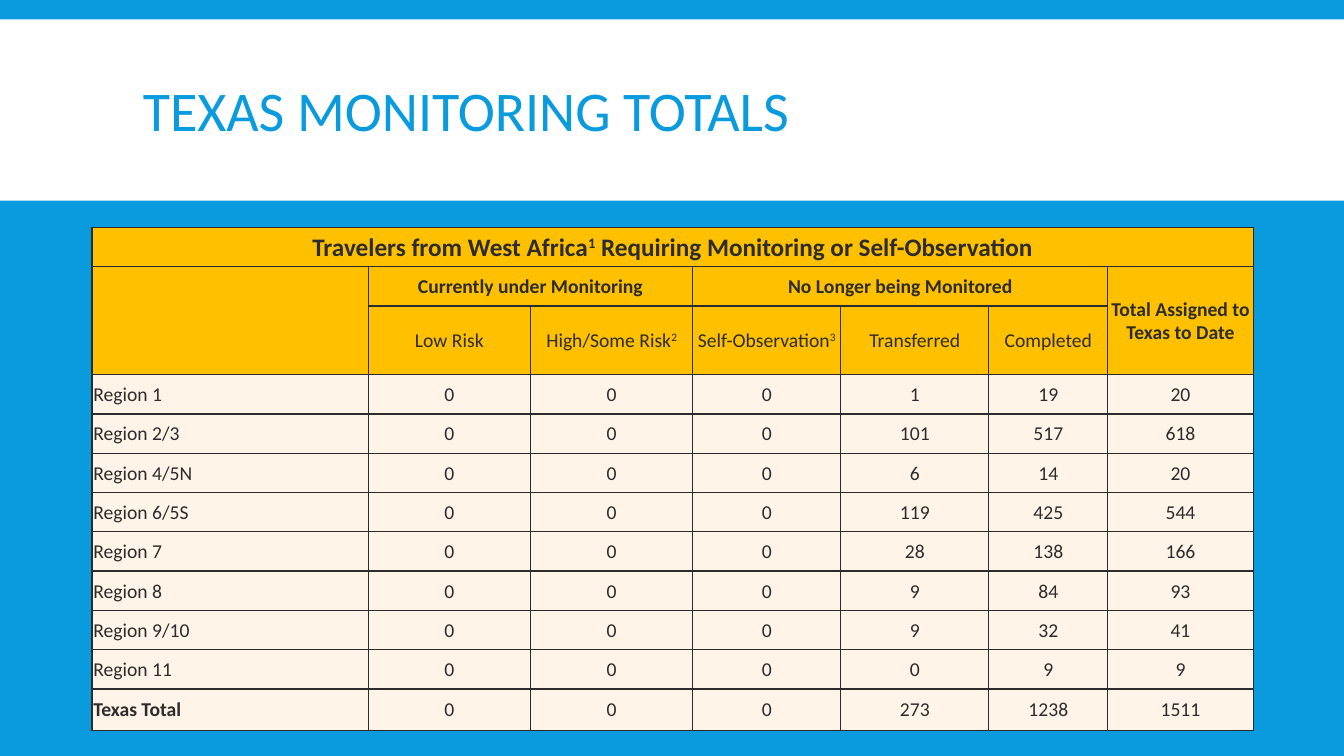
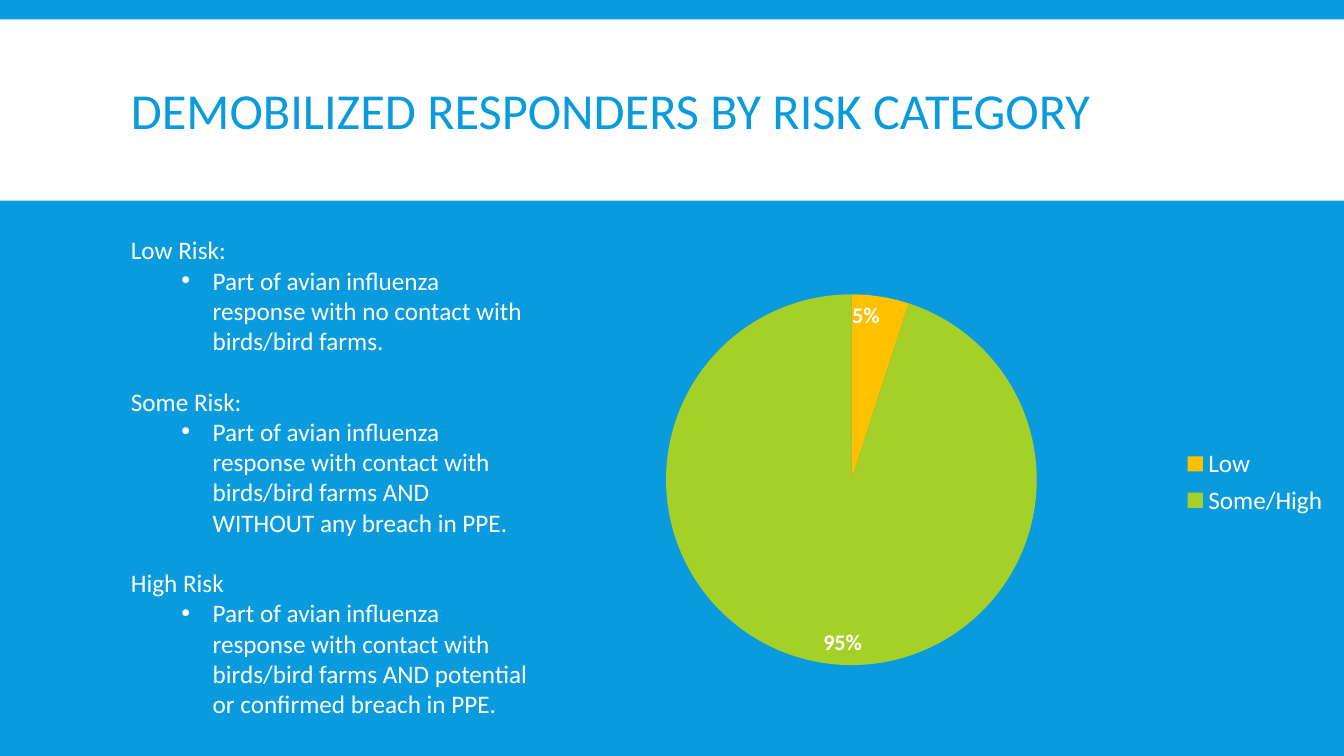
from dataclasses import dataclass

from lxml.etree import SubElement
from pptx import Presentation
from pptx.chart.data import CategoryChartData
from pptx.dml.color import RGBColor as RGB
from pptx.enum.chart import XL_CHART_TYPE as CT, XL_LABEL_POSITION as LP, XL_LEGEND_POSITION as LG
from pptx.enum.shapes import MSO_SHAPE as SHAPE
from pptx.enum.text import MSO_ANCHOR as ANCHOR, PP_ALIGN as ALIGN
from pptx.oxml import parse_xml
from pptx.oxml.ns import nsdecls, qn
from pptx.util import Cm, Pt


@dataclass(frozen=True)
class Theme:
    font: str = "Calibri"
    blue: RGB = RGB(0x09, 0x9B, 0xDD)
    white: RGB = RGB(0xFF, 0xFF, 0xFF)
    ink: RGB = RGB(0x2C, 0x2C, 0x2C)
    gold: RGB = RGB(0xFF, 0xC0, 0x00)
    cream: RGB = RGB(0xFF, 0xF4, 0xE7)
    green: RGB = RGB(0xA5, 0xD0, 0x28)
    body: int = 18
    cell: int = 14
    label: int = 16


T = Theme()
SLIDE_W, SLIDE_H = 33.87, 19.05

TOTALS_TITLE = "TEXAS MONITORING TOTALS"
HEADER = [
    (0, 0, 1, 7, "Travelers from West Africa^1^ Requiring Monitoring or Self-Observation", 18, True),
    (1, 0, 2, 1, "", 14, True),
    (1, 1, 1, 2, "Currently under Monitoring", 14, True),
    (1, 3, 1, 3, "No Longer being Monitored", 14, True),
    (1, 6, 2, 1, "Total Assigned to Texas to Date", 14, True),
    (2, 1, 1, 1, "Low Risk", 14, False),
    (2, 2, 1, 1, "High/Some Risk^2^", 14, False),
    (2, 3, 1, 1, "Self-Observation^3^", 14, False),
    (2, 4, 1, 1, "Transferred", 14, False),
    (2, 5, 1, 1, "Completed", 14, False),
]
REGIONS = [
    ("Region 1", 0, 0, 0, 1, 19, 20),
    ("Region 2/3", 0, 0, 0, 101, 517, 618),
    ("Region 4/5N", 0, 0, 0, 6, 14, 20),
    ("Region 6/5S", 0, 0, 0, 119, 425, 544),
    ("Region 7", 0, 0, 0, 28, 138, 166),
    ("Region 8", 0, 0, 0, 9, 84, 93),
    ("Region 9/10", 0, 0, 0, 9, 32, 41),
    ("Region 11", 0, 0, 0, 0, 9, 9),
    ("Texas Total", 0, 0, 0, 273, 1238, 1511),
]
HEAD_ROWS = 3
COL_W = [6.96, 4.09, 4.09, 3.73, 3.73, 3.0, 3.66]
ROW_H = [0.99, 0.99, 1.73] + [0.99] * (len(REGIONS) - 1) + [1.04]

RISK_TITLE = "DEMOBILIZED RESPONDERS BY RISK CATEGORY"
RISKS = [
    ("Low Risk:", "Part of avian influenza response with no contact with birds/bird farms."),
    ("Some Risk:", "Part of avian influenza response with contact with birds/bird farms "
                   "AND WITHOUT any breach in PPE."),
    ("High Risk", "Part of avian influenza response with contact with birds/bird farms "
                  "AND potential or confirmed breach in PPE."),
]
SHARES = [("Low", 5, T.gold), ("Some/High", 95, T.green)]


def style(font, size, color, bold=False):
    font.name, font.size, font.bold = T.font, Pt(size), bold
    font.color.rgb = color


def add_run(p, text, size, color, bold=False):
    r = p.add_run()
    r.text = text
    style(r.font, size, color, bold)
    return r


def add_box(slide, x, y, w, h):
    tf = slide.shapes.add_textbox(Cm(x), Cm(y), Cm(w), Cm(h)).text_frame
    tf.word_wrap = True
    return tf


def add_slide(prs, title, x, w, size):
    slide = prs.slides.add_slide(prs.slide_layouts[6])
    fill = slide.background.fill
    fill.solid()
    fill.fore_color.rgb = T.blue
    band = slide.shapes.add_shape(SHAPE.RECTANGLE, 0, Cm(0.49), Cm(SLIDE_W), Cm(4.57))
    band.shadow.inherit = False
    band.fill.solid()
    band.fill.fore_color.rgb = T.white
    band.line.fill.background()
    tf = add_box(slide, x, 0.79, w, 4.19)
    tf.vertical_anchor = ANCHOR.MIDDLE
    p = tf.paragraphs[0]
    p.line_spacing = 0.85
    add_run(p, title, size, T.blue)
    return slide


def format_cell(cell, color):
    cell.margin_left = cell.margin_right = cell.margin_top = Cm(0.03)
    cell.margin_bottom = 0
    cell.vertical_anchor = ANCHOR.MIDDLE
    tc_pr = cell._tc.get_or_add_tcPr()
    for side in ("lnL", "lnR", "lnT", "lnB"):
        tc_pr.append(parse_xml(
            f'<a:{side} {nsdecls("a")} w="{Pt(1)}"><a:solidFill>'
            f'<a:srgbClr val="{T.ink}"/></a:solidFill></a:{side}>'))
    cell.fill.solid()
    cell.fill.fore_color.rgb = color


def write_cell(cell, text, size, bold, align=ALIGN.CENTER):
    p = cell.text_frame.paragraphs[0]
    p.alignment = align
    for i, part in enumerate(text.split("^")):
        if part:
            r = add_run(p, part, size, T.ink, bold)
            if i % 2:
                r._r.get_or_add_rPr().set("baseline", "30000")


def add_totals(slide):
    table = slide.shapes.add_table(len(ROW_H), len(COL_W), Cm(2.32), Cm(5.73),
                                   Cm(sum(COL_W)), Cm(sum(ROW_H))).table
    for col, w in zip(table.columns, COL_W):
        col.width = Cm(w)
    for i, (row, h) in enumerate(zip(table.rows, ROW_H)):
        row.height = Cm(h)
        for cell in row.cells:
            format_cell(cell, T.gold if i < HEAD_ROWS else T.cream)
    for row, col, rows, cols, text, size, bold in HEADER:
        cell = table.cell(row, col)
        if rows * cols > 1:
            cell.merge(table.cell(row + rows - 1, col + cols - 1))
        write_cell(cell, text, size, bold)
    for i, (name, *counts) in enumerate(REGIONS, HEAD_ROWS):
        write_cell(table.cell(i, 0), name, T.cell, i == len(ROW_H) - 1, ALIGN.LEFT)
        for j, count in enumerate(counts, 1):
            write_cell(table.cell(i, j), str(count), T.cell, False)


def add_risks(slide):
    tf = add_box(slide, 3.05, 5.79, 10.59, 12.57)
    for i, (name, meaning) in enumerate(RISKS):
        p = tf.add_paragraph() if i else tf.paragraphs[0]
        p.space_before = Pt(21.6 if i else 0)
        add_run(p, name, T.body, T.white)
        p = tf.add_paragraph()
        p.level = 1
        add_run(p, meaning, T.body, T.white)
        p_pr = p._p.get_or_add_pPr()
        p_pr.set("marL", str(Cm(2.06)))
        p_pr.set("indent", str(Cm(-0.79)))
        SubElement(p_pr, qn("a:buFont"), typeface="Arial")
        SubElement(p_pr, qn("a:buChar"), char="•")


def manual_layout(x, y, w, h, inner=False):
    target = '<c:layoutTarget val="inner"/>' if inner else ""
    sizes = "".join(f'<c:{k} val="{v}"/>' for k, v in zip("xywh", (x, y, w, h)))
    return parse_xml(
        f'<c:layout {nsdecls("c")}><c:manualLayout>{target}<c:xMode val="edge"/>'
        f'<c:yMode val="edge"/>{sizes}</c:manualLayout></c:layout>')


def place_part(part, layout, after=None):
    for old in part.findall(qn("c:layout")):
        part.remove(old)
    if after is None:
        part.insert(0, layout)
    else:
        part.find(qn(after)).addnext(layout)


def add_pie(slide):
    data = CategoryChartData()
    data.categories = [name for name, _, _ in SHARES]
    data.add_series("Series 1", [share for _, share, _ in SHARES])
    chart = slide.shapes.add_chart(CT.PIE, Cm(14.22), Cm(6.25), Cm(19.56), Cm(11.68), data).chart
    chart.has_title = False
    style(chart.font, 10, T.white)
    chart.has_legend = True
    legend = chart.legend
    legend.position = LG.RIGHT
    legend.include_in_layout = False
    style(legend.font, T.body, T.white)
    plot = chart.plots[0]
    plot.vary_by_categories = True
    for i, (_, _, color) in enumerate(SHARES):
        fill = plot.series[0].points[i].format.fill
        fill.solid()
        fill.fore_color.rgb = color
    plot.has_data_labels = True
    labels = plot.data_labels
    labels.show_percentage, labels.show_value = True, False
    labels.number_format, labels.number_format_is_linked = "0%", False
    labels.position = LP.INSIDE_END
    style(labels.font, T.label, T.white, True)
    area = chart._chartSpace.chart.plotArea
    place_part(area, manual_layout(0.13, 0.1, 0.48, 0.8, inner=True))
    place_part(legend._element, manual_layout(0.79, 0.42, 0.2, 0.17), "c:legendPos")


def main():
    prs = Presentation()
    prs.slide_width, prs.slide_height = Cm(SLIDE_W), Cm(SLIDE_H)
    add_totals(add_slide(prs, TOTALS_TITLE, 3.35, 27.18, 40))
    slide = add_slide(prs, RISK_TITLE, 3.05, 28.7, 36)
    add_pie(slide)
    add_risks(slide)
    prs.save("out.pptx")


if __name__ == "__main__":
    main()
